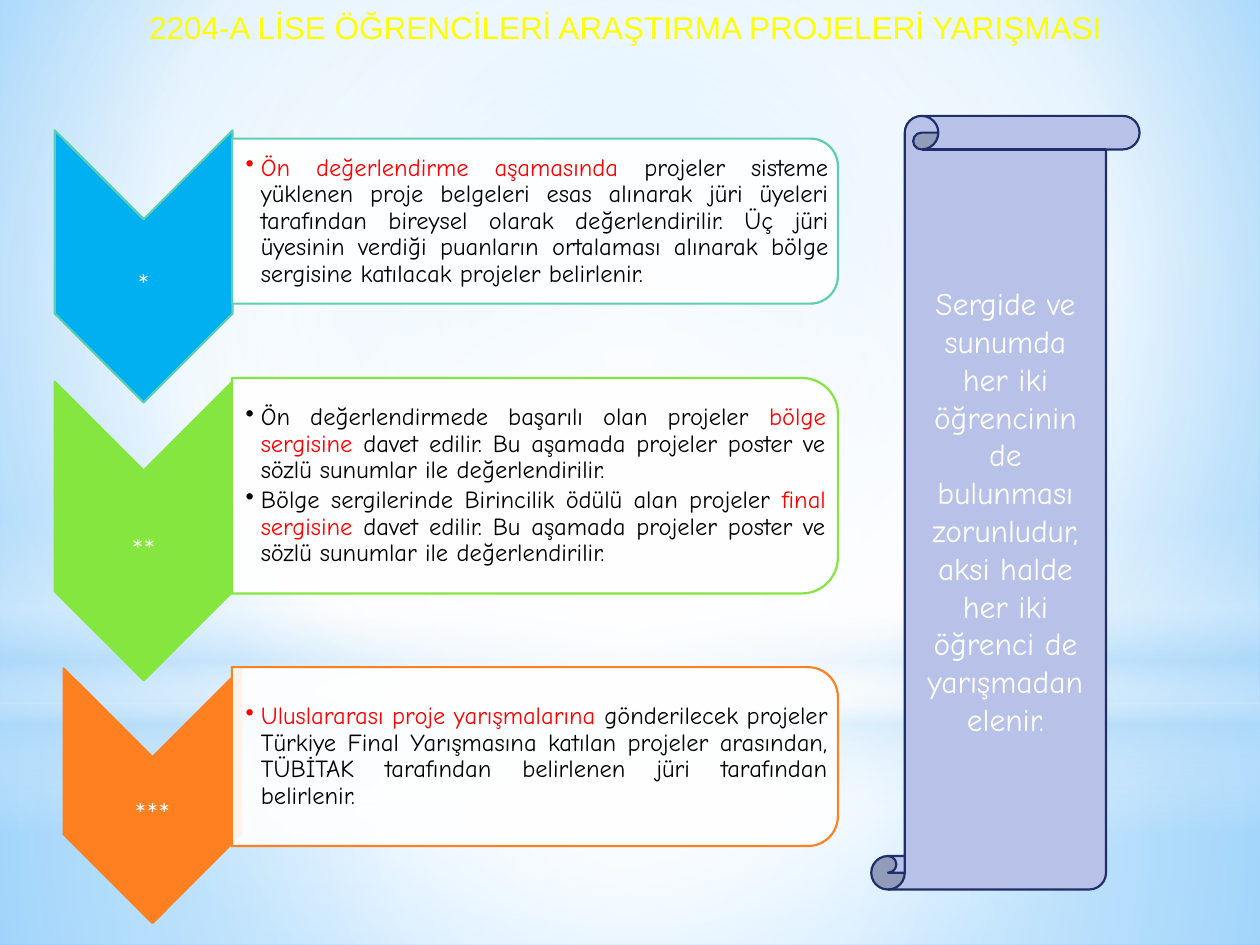
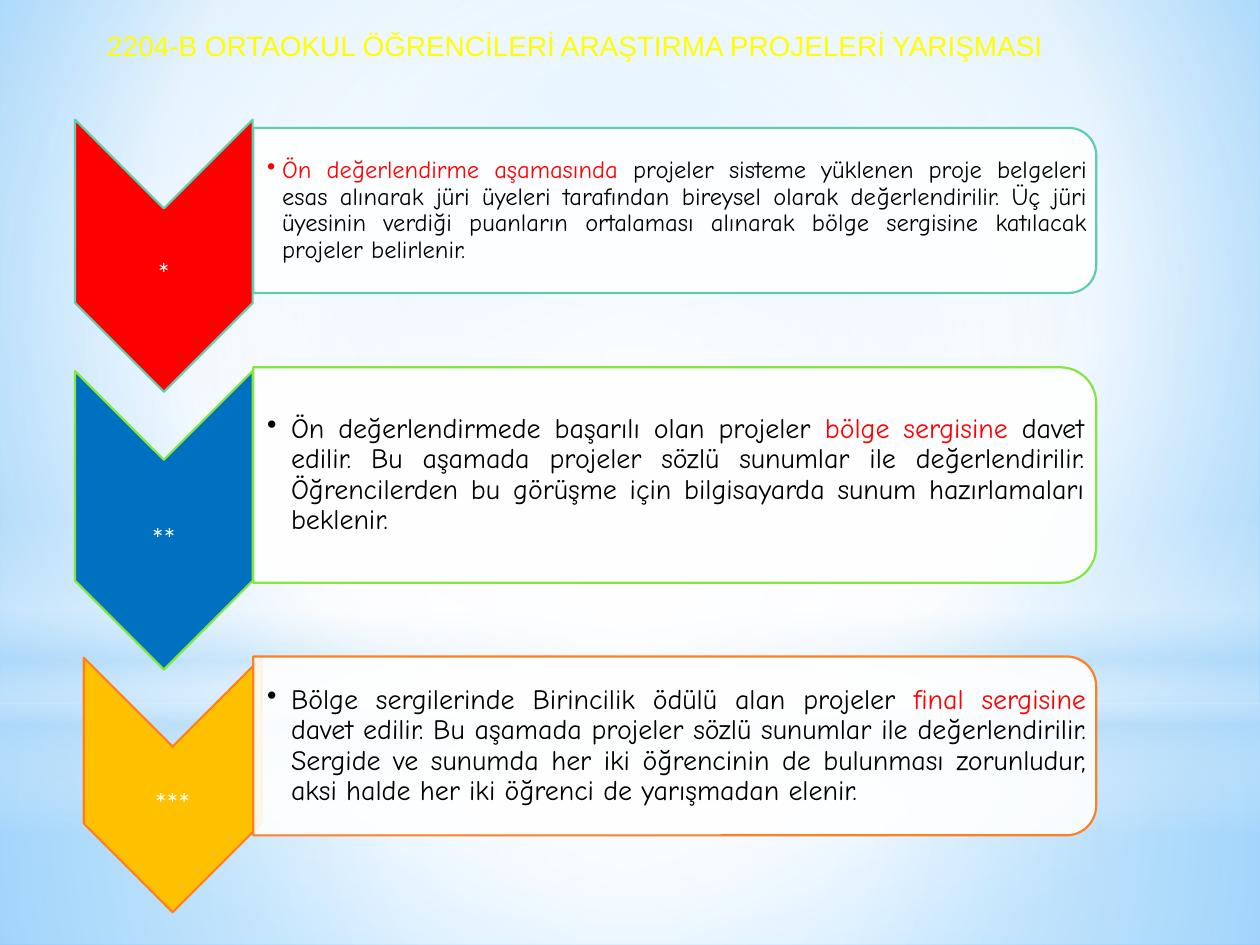
from dataclasses import dataclass

from lxml.etree import SubElement
from pptx import Presentation
from pptx.dml.color import RGBColor
from pptx.enum.shapes import MSO_SHAPE as Preset
from pptx.enum.text import MSO_ANCHOR as Anchor, MSO_AUTO_SIZE as AutoSize, PP_ALIGN as Align
from pptx.oxml.ns import qn
from pptx.util import Inches, Pt


@dataclass(frozen=True)
class Theme:
    white: str = "FFFFFF"
    black: str = "000000"
    highlight: str = "FF0000"
    title: str = "FFFF00"
    haze: str = "B4DCFA"
    scroll: str = "B8C2E9"
    scroll_line: str = "1F2E69"
    row_lines: tuple = ("5DCEAF", "86E640", "FF8021")
    title_font: str = "Arial"
    body_font: str = "Comic Neue"
    mark_font: str = "Lato"
    mark_size: int = 16
    scroll_size: int = 18
    line_width: float = 1.25


theme = Theme()
rgb = RGBColor.from_string

# Grid in inches: three rows, a chevron column and a panel column
SLIDE_W, SLIDE_H = 10, 7.5
ROW_STEP = 2.1
CHEVRON_W = 1.41
CHEVRON_HEIGHTS = (2.16, 2.37, 2.02)
CHEVRON_SHIFTS = (0, 0, 0.07)
PANEL_HEIGHTS = (1.31, 1.71, 1.42)
PANEL_RISES = (0.36, 0.36, 0.31)
MARK_DROP = 0.16
HANGING = {14: 0.12, 16: 0.19}  # bullet indent for each text size

# Asterisks enclose the highlighted words of a paragraph
FIRST_STAGE = ("*Ön değerlendirme aşamasında* projeler sisteme yüklenen proje belgeleri esas "
               "alınarak jüri üyeleri tarafından bireysel olarak değerlendirilir. Üç jüri "
               "üyesinin verdiği puanların ortalaması alınarak bölge sergisine katılacak "
               "projeler belirlenir.")
REGION = "Ön değerlendirmede başarılı olan projeler *bölge sergisine* davet edilir. Bu aşamada projeler "
FINAL = "Bölge sergilerinde Birincilik ödülü alan projeler *final sergisine* davet edilir. Bu aşamada projeler "
BOTH_STUDENTS = ("Sergide ve sunumda her iki öğrencinin de bulunması zorunludur, "
                 "aksi halde her iki öğrenci de yarışmadan elenir.")
POSTER_AND_TALK = "poster ve sözlü sunumlar ile değerlendirilir."
TALK = "sözlü sunumlar ile değerlendirilir. "

contests = [
    dict(
        title="2204-A LİSE ÖĞRENCİLERİ ARAŞTIRMA PROJELERİ YARIŞMASI",
        title_size=18, title_left=0.83, title_top=0.01, title_height=0.4,
        chevron_x=1.14, first_y=2.115, panel_left=1.84, panel_width=4.81,
        fills=("00B0F0", "86E640", "FF8021"),
        sizes=(14, 14, 14),
        stages=[
            [FIRST_STAGE],
            [REGION + POSTER_AND_TALK, FINAL + POSTER_AND_TALK],
            ["*Uluslararası proje yarışmalarına* gönderilecek projeler Türkiye Final "
             "Yarışmasına katılan projeler arasından, TÜBİTAK tarafından belirlenen jüri "
             "tarafından belirlenir."],
        ],
        scroll=BOTH_STUDENTS,
    ),
    dict(
        title="2204-B ORTAOKUL ÖĞRENCİLERİ ARAŞTIRMA PROJELERİ YARIŞMASI",
        title_size=16, title_left=0.43, title_top=0.18, title_height=0.37,
        chevron_x=1.3, first_y=2.03, panel_left=2.01, panel_width=6.69,
        fills=("FF0000", "0070C0", "FFC000"),
        sizes=(14, 16, 16),
        stages=[
            [FIRST_STAGE],
            [REGION + TALK + "Öğrencilerden bu görüşme için bilgisayarda sunum "
             "hazırlamaları beklenir."],
            [FINAL + TALK + BOTH_STUDENTS],
        ],
        scroll=None,
    ),
]


def paint_gradient(fill, owner, stops, focus=None):
    """Fill with (position, colour, opacity) stops, round a focus or else downwards."""
    fill.solid()
    solid = owner.find(".//" + qn("a:solidFill"))
    gradient = solid.makeelement(qn("a:gradFill"), {"rotWithShape": "1"})
    stop_list = SubElement(gradient, qn("a:gsLst"))
    for position, color, opacity in stops:
        stop = SubElement(stop_list, qn("a:gs"), pos=str(position * 1000))
        stop_color = SubElement(stop, qn("a:srgbClr"), val=color)
        if opacity < 100:
            SubElement(stop_color, qn("a:alpha"), val=str(opacity * 1000))
    if focus:
        path = SubElement(gradient, qn("a:path"), path="circle")
        sides = {side: str(share * 1000) for side, share in zip("ltrb", focus)}
        SubElement(path, qn("a:fillToRect"), sides)
    else:
        SubElement(gradient, qn("a:lin"), ang="5400000", scaled="0")
    solid.getparent().replace(solid, gradient)


def add_preset(slide, preset, center_x, center_y, width, height, fill, line, rotation=0):
    """Add a filled preset shape by its centre and its unrotated size."""
    shape = slide.shapes.add_shape(preset, Inches(center_x - width / 2), Inches(center_y - height / 2),
                                   Inches(width), Inches(height))
    shape.rotation = rotation
    shape.shadow.inherit = False
    shape.fill.solid()
    shape.fill.fore_color.rgb = rgb(fill)
    if line:
        shape.line.color.rgb = rgb(line)
        shape.line.width = Pt(theme.line_width)
    else:
        shape.line.fill.background()
    return shape


presentation = Presentation()
presentation.slide_width, presentation.slide_height = Inches(SLIDE_W), Inches(SLIDE_H)
title_only = presentation.slide_layouts[5]
slides = [presentation.slides.add_slide(title_only) for contest in contests]

# Shared backdrop, placed on the slide master behind its placeholders
master = presentation.slide_master
paint_gradient(master.background.fill, master.element,
               [(0, "9ED5FF", 100), (60, theme.white, 100), (100, "5BB9FF", 100)],
               (20, 10, 20, 60))
middle = (50, 50, 50, 50)
backdrop = [
    (Preset.RECTANGLE, 5.58, 1.92, middle,
     [(0, theme.white, 91), (37, theme.white, 76), (100, theme.haze, 79)]),
    (Preset.RECTANGLE, 0, 5.58, middle,
     [(0, theme.white, 89), (48, theme.white, 62), (100, theme.haze, 79)]),
    (Preset.RECTANGLE, 4.12, 2.5, None,
     [(0, theme.white, 0), (29, theme.white, 30), (45, theme.haze, 40),
      (55, theme.white, 26), (65, theme.haze, 60), (100, theme.white, 0)]),
    (Preset.OVAL, 1.75, 5.58, middle, [(0, theme.white, 100), (56, theme.white, 0)]),
]
for layer, (preset, top, height, focus, stops) in enumerate(backdrop):
    band = add_preset(slides[0], preset, SLIDE_W / 2, top + height / 2, SLIDE_W, height,
                      theme.white, None)
    paint_gradient(band.fill, band.element, stops, focus)
    master.shapes.element.insert(2 + layer, band.element)

for slide, contest in zip(slides, contests):
    title = slide.shapes.title
    title.left, title.top = Inches(contest["title_left"]), Inches(contest["title_top"])
    title.width, title.height = Inches(8.27), Inches(contest["title_height"])
    title.text_frame.text = contest["title"]
    title.text_frame.auto_size = AutoSize.NONE
    title.text_frame.vertical_anchor = Anchor.TOP
    paragraph = title.text_frame.paragraphs[0]
    paragraph.alignment = Align.CENTER
    font = paragraph.runs[0].font
    font.name, font.size = theme.title_font, Pt(contest["title_size"])
    font.color.rgb = rgb(theme.title)

    for row, stage in enumerate(contest["stages"]):
        line = theme.row_lines[row]
        chevron_x = contest["chevron_x"] + CHEVRON_SHIFTS[row]
        chevron_y = contest["first_y"] + row * ROW_STEP
        add_preset(slide, Preset.CHEVRON, chevron_x, chevron_y, CHEVRON_HEIGHTS[row], CHEVRON_W,
                   contest["fills"][row], line, rotation=90)

        mark = slide.shapes.add_textbox(Inches(chevron_x - CHEVRON_W / 2),
                                        Inches(chevron_y + MARK_DROP - 0.2),
                                        Inches(CHEVRON_W), Inches(0.4))
        mark.text_frame.text = "*" * (row + 1)
        mark.text_frame.vertical_anchor = Anchor.MIDDLE
        mark.text_frame.word_wrap = True
        paragraph = mark.text_frame.paragraphs[0]
        paragraph.alignment, paragraph.line_spacing = Align.CENTER, 0.9
        font = paragraph.runs[0].font
        font.name, font.size = theme.mark_font, Pt(theme.mark_size)
        font.color.rgb = rgb(theme.white)

        panel_left, panel_width = contest["panel_left"], contest["panel_width"]
        panel_height = PANEL_HEIGHTS[row]
        panel_y = chevron_y - PANEL_RISES[row]
        panel = add_preset(slide, Preset.ROUND_2_SAME_RECTANGLE, panel_left + panel_width / 2, panel_y,
                           panel_height, panel_width, theme.white, line, rotation=90)
        panel_color = panel.element.spPr.find(qn("a:solidFill"))[0]
        SubElement(panel_color, qn("a:alpha"), val="90000")

        size = contest["sizes"][row]
        box = slide.shapes.add_textbox(Inches(panel_left), Inches(panel_y - panel_height / 2),
                                       Inches(panel_width), Inches(panel_height))
        frame = box.text_frame
        frame.word_wrap = True
        frame.vertical_anchor = Anchor.MIDDLE
        frame.margin_left = Inches(0.11)
        frame.margin_right = Inches(0.01 + 0.05 * panel_height)
        frame.margin_top = frame.margin_bottom = Inches(0.01)
        for number, text in enumerate(stage):
            paragraph = frame.add_paragraph() if number else frame.paragraphs[0]
            properties = paragraph._p.get_or_add_pPr()
            indent = Inches(HANGING[size])
            properties.set("marL", str(indent))
            properties.set("indent", str(-indent))
            SubElement(properties, qn("a:buChar"), char="•")
            paragraph.alignment, paragraph.line_spacing = Align.JUSTIFY, 0.9
            paragraph.space_after = Pt(round(size * 0.15))
            for part, words in enumerate(text.split("*")):
                if words:
                    run = paragraph.add_run()
                    run.text = words
                    run.font.name, run.font.size = theme.body_font, Pt(size)
                    run.font.color.rgb = rgb(theme.highlight if part % 2 else theme.black)

    if contest["scroll"]:
        scroll = add_preset(slide, Preset.VERTICAL_SCROLL, 7.98, 3.99, 2.13, 6.14,
                            theme.scroll, theme.scroll_line)
        scroll.text_frame.text = contest["scroll"]
        scroll.text_frame.word_wrap = True
        scroll.text_frame.vertical_anchor = Anchor.MIDDLE
        paragraph = scroll.text_frame.paragraphs[0]
        paragraph.alignment = Align.CENTER
        font = paragraph.runs[0].font
        font.name, font.size = theme.body_font, Pt(theme.scroll_size)
        font.color.rgb = rgb(theme.white)

presentation.save("out.pptx")
